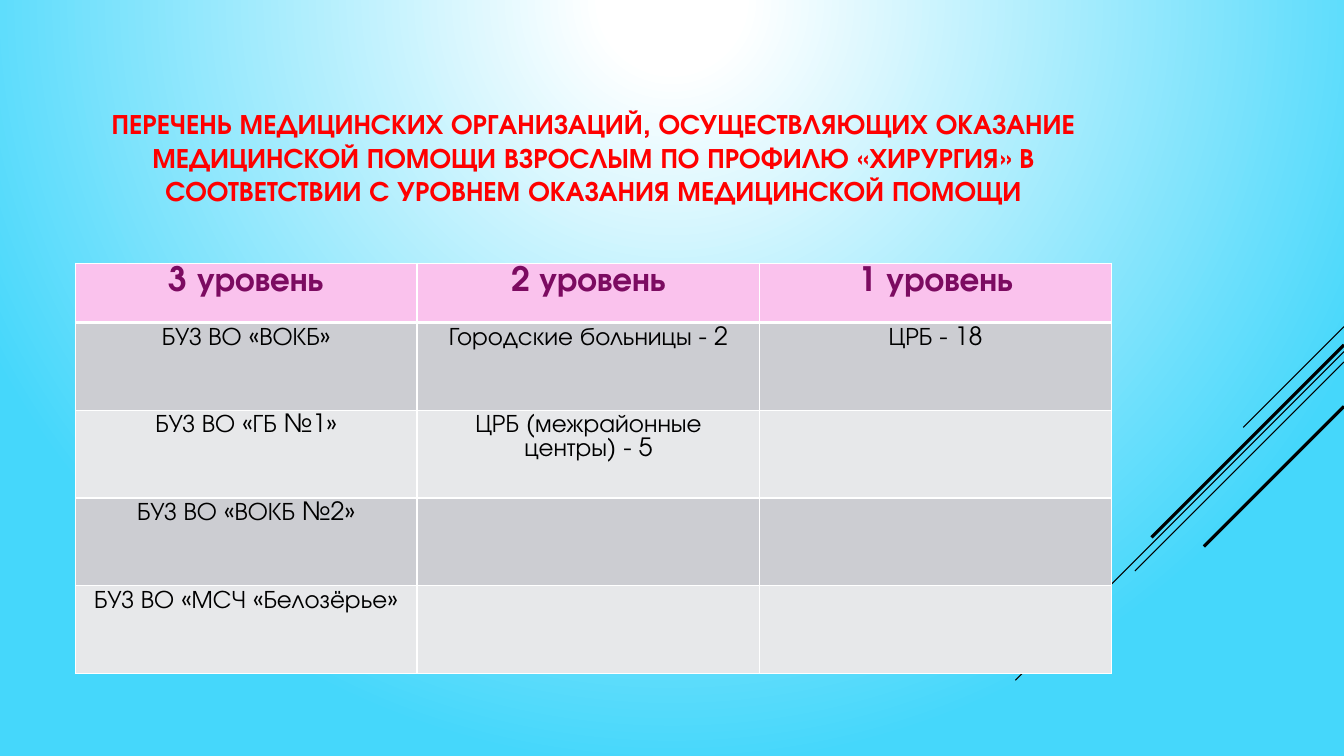
from lxml.etree import SubElement
from pptx import Presentation
from pptx.dml.color import RGBColor
from pptx.enum.shapes import MSO_CONNECTOR as Connector
from pptx.enum.text import MSO_ANCHOR as Anchor, PP_ALIGN as Align
from pptx.oxml import parse_xml
from pptx.oxml.ns import nsdecls, qn
from pptx.util import Cm, Pt

FONT = "TeX Gyre Adventor"
WHITE = RGBColor(0xFF, 0xFF, 0xFF)
SKY = RGBColor(0x45, 0xD7, 0xFB)
BLACK = RGBColor(0x00, 0x00, 0x00)
RED = RGBColor(0xFF, 0x00, 0x00)
PLUM = RGBColor(0x7C, 0x0B, 0x61)
PINK = RGBColor(0xFA, 0xC2, 0xED)
GREY = RGBColor(0xCC, 0xCD, 0xD2)
PALE_GREY = RGBColor(0xE7, 0xE8, 0xEA)

TITLE = (
    "ПЕРЕЧЕНЬ МЕДИЦИНСКИХ ОРГАНИЗАЦИЙ, ОСУЩЕСТВЛЯЮЩИХ ОКАЗАНИЕ "
    "МЕДИЦИНСКОЙ ПОМОЩИ ВЗРОСЛЫМ ПО ПРОФИЛЮ «ХИРУРГИЯ» "
    "В СООТВЕТСТВИИ С УРОВНЕМ ОКАЗАНИЯ МЕДИЦИНСКОЙ ПОМОЩИ"
)
LEVELS = [
    ["3 уровень", "2 уровень", "1 уровень"],
    ["БУЗ ВО «ВОКБ»", "Городские больницы - 2", "ЦРБ - 18"],
    ["БУЗ ВО «ГБ №1»", "ЦРБ (межрайонные центры) - 5", ""],
    ["БУЗ ВО «ВОКБ №2»", "", ""],
    ["БУЗ ВО «МСЧ «Белозёрье»", "", ""],
]
COLUMN_WIDTHS = [8.61, 8.64, 8.86]
HEADER_HEIGHT, ROW_HEIGHT = 1.5, 2.21
CELL_MARGIN = 0.1
RAYS = [(0, 2.54, 0.75), (0.63, 8.28, 0.75), (0.89, 5.27, 0.75),
        (0.46, 4.85, 2.25), (2.01, 3.53, 2.25)]


def paint_background(page):
    """Fill the page with a glow that spreads from the middle of its top edge."""
    page.background.fill.solid()
    properties = page.background.fill._xPr
    properties.remove(properties.find(qn("a:solidFill")))
    properties.insert(0, parse_xml(
        f'<a:gradFill {nsdecls("a")} rotWithShape="1"><a:gsLst>'
        f'<a:gs pos="9000"><a:srgbClr val="{WHITE}"/></a:gs>'
        f'<a:gs pos="100000"><a:srgbClr val="{SKY}"/></a:gs></a:gsLst>'
        '<a:path path="circle"><a:fillToRect b="100000"/></a:path></a:gradFill>'))


def draw_rays(page, right, top):
    """Draw the diagonal rays that run down and left from the right edge."""
    for drop, run, weight in RAYS:
        start = top + drop
        ray = page.shapes.add_connector(
            Connector.STRAIGHT, Cm(right), Cm(start), Cm(right - run), Cm(start + run))
        ray.line.color.rgb = BLACK
        ray.line.width = Pt(weight)
        SubElement(ray._element.spPr, qn("a:effectLst"))


def write(frame, text, size, color, bold):
    """Put one centred run of text into a frame."""
    para = frame.paragraphs[0]
    para.alignment = Align.CENTER
    para.line_spacing = 1.0
    span = para.add_run()
    span.text = text
    span.font.name = FONT
    span.font.size = Pt(size)
    span.font.bold = bold
    span.font.color.rgb = color


def add_title(page, left, top, width, height):
    """Add the red heading, centred in its box."""
    box = page.shapes.add_textbox(Cm(left), Cm(top), Cm(width), Cm(height))
    box.text_frame.word_wrap = True
    box.text_frame.vertical_anchor = Anchor.MIDDLE
    write(box.text_frame, TITLE, 20, RED, True)


def add_borders(cell, bottom):
    """Outline a cell in white, with its own weight for the bottom edge."""
    properties = cell._tc.get_or_add_tcPr()
    for index, (side, weight) in enumerate(
            [("L", 1), ("R", 1), ("T", 1), ("B", bottom)]):
        properties.insert(index, parse_xml(
            f'<a:ln{side} {nsdecls("a")} w="{Pt(weight)}"><a:solidFill>'
            f'<a:srgbClr val="{WHITE}"/></a:solidFill></a:ln{side}>'))


def add_levels_table(page, left, top):
    """Add the table of organisations by level of care."""
    heights = [HEADER_HEIGHT] + [ROW_HEIGHT] * (len(LEVELS) - 1)
    table = page.shapes.add_table(
        len(LEVELS), len(COLUMN_WIDTHS), Cm(left), Cm(top),
        Cm(sum(COLUMN_WIDTHS)), Cm(sum(heights))).table
    for column, width in zip(table.columns, COLUMN_WIDTHS):
        column.width = Cm(width)
    for index, (row, height, texts) in enumerate(zip(table.rows, heights, LEVELS)):
        row.height = Cm(height)
        header = index == 0
        for cell, text in zip(row.cells, texts):
            cell.margin_top = cell.margin_bottom = Cm(CELL_MARGIN)
            cell.vertical_anchor = Anchor.TOP
            cell.fill.solid()
            cell.fill.fore_color.rgb = PINK if header else GREY if index % 2 else PALE_GREY
            add_borders(cell, 3 if header else 1)
            if text:
                write(cell.text_frame, text, 24 if header else 18,
                      PLUM if header else BLACK, header)


def main():
    """Build the slide and save it."""
    deck = Presentation()
    deck.slide_width, deck.slide_height = Cm(33.87), Cm(19.05)
    page = deck.slides.add_slide(deck.slide_layouts[6])
    paint_background(page)
    draw_rays(page, 33.87, 8.23)
    add_title(page, 1.9, 1.9, 26.11, 4.11)
    add_levels_table(page, 1.9, 6.63)
    deck.save("out.pptx")


if __name__ == "__main__":
    main()
